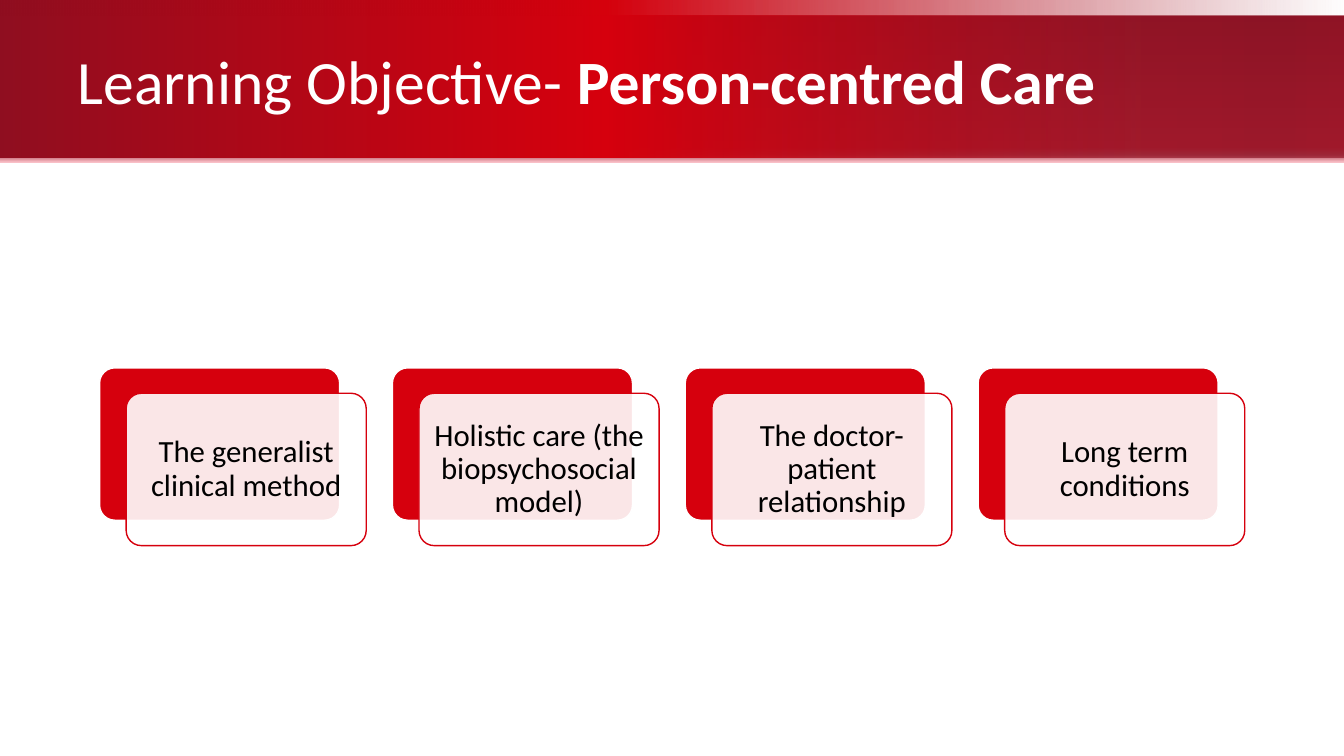
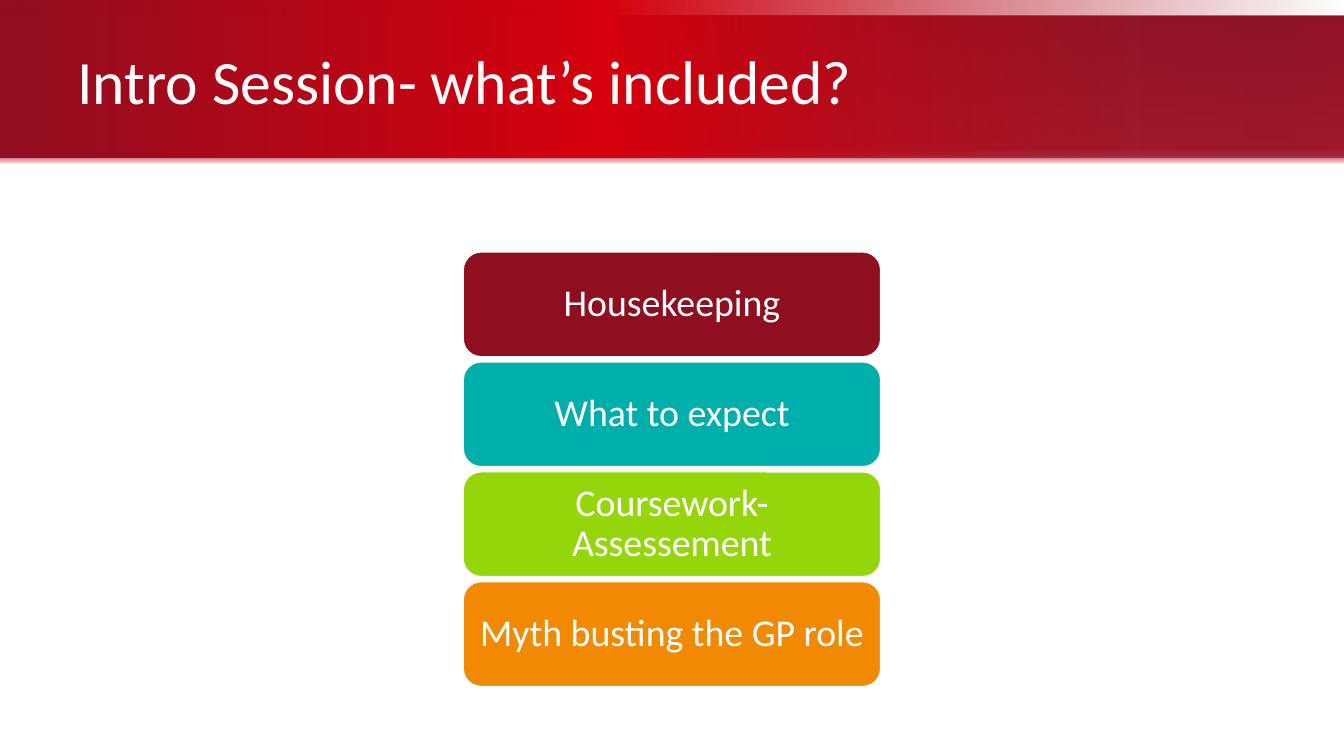
from dataclasses import dataclass
from typing import Optional

import pptx
import pptx.dml.color
import pptx.enum.shapes
import pptx.enum.text
import pptx.oxml.ns
import pptx.util
from lxml import etree
from pptx.util import Cm, Pt

RGB = pptx.dml.color.RGBColor
SHAPE = pptx.enum.shapes.MSO_SHAPE
ALIGN = pptx.enum.text.PP_ALIGN
ANCHOR = pptx.enum.text.MSO_ANCHOR
qn = pptx.oxml.ns.qn


@dataclass(frozen=True)
class Theme:
    font: str = "Calibri"
    white: str = "FFFFFF"
    black: str = "000000"
    red: str = "D6000D"
    crimson: str = "8F0E20"
    teal: str = "00AFAB"
    lime: str = "94D60A"
    orange: str = "F18903"
    title_size: int = 44
    card_size: int = 22
    bar_size: int = 27
    line_spacing: float = 0.9
    line_width: float = 1


THEME = Theme()
SLIDE_WIDTH, SLIDE_HEIGHT = 33.87, 19.05


@dataclass(frozen=True)
class Rect:
    """Position and size in centimetres."""
    left: float
    top: float
    width: float
    height: float


@dataclass(frozen=True)
class Stop:
    percent: int
    colour: str
    alpha: int = 100


@dataclass(frozen=True)
class Band:
    rect: Rect
    angle: int
    stops: tuple[Stop, ...]


@dataclass(frozen=True)
class BoxStyle:
    fill: str
    line: str
    alpha: int = 100
    corner: float = 0.1
    text_colour: str = THEME.black
    size: int = THEME.card_size
    inset_x: float = 0.2
    inset_y: float = 0.2


@dataclass(frozen=True)
class TitleRun:
    text: str
    bold: bool = False


HEADER_BANDS = (
    Band(Rect(0, 0, SLIDE_WIDTH, 0.43), 0, (
        Stop(0, THEME.crimson), Stop(45, THEME.red), Stop(100, THEME.crimson, 0))),
    Band(Rect(0, 0.4, SLIDE_WIDTH, 3.69), 90, (
        Stop(0, "931E2F"), Stop(90, "BA2A3C"), Stop(95, "B54E5C"), Stop(100, "F9BFC7"))),
    Band(Rect(0, 0.4, SLIDE_WIDTH, 3.56), 0, (
        Stop(0, THEME.crimson), Stop(45, THEME.red), Stop(85, THEME.crimson, 60),
        Stop(95, "890D1F", 60), Stop(100, THEME.crimson, 60))),
)
TITLE_RECT = Rect(1.7, 0.4, 28.04, 3.48)


def place(shape, rect: Rect) -> None:
    shape.left, shape.top = Cm(rect.left), Cm(rect.top)
    shape.width, shape.height = Cm(rect.width), Cm(rect.height)


def add_shape(page, kind, rect: Rect):
    shape = page.shapes.add_shape(
        kind, Cm(rect.left), Cm(rect.top), Cm(rect.width), Cm(rect.height))
    shape.shadow.inherit = False
    return shape


def set_alpha(colour_element, percent: int) -> None:
    if percent < 100:
        etree.SubElement(colour_element, qn("a:alpha"), val=str(percent * 1000))


def style_para(para, colour: str, size: int, align) -> None:
    para.alignment = align
    para.line_spacing = THEME.line_spacing
    para.font.name = THEME.font
    para.font.size = Pt(size)
    para.font.color.rgb = RGB.from_string(colour)


def add_band(page, band: Band):
    shape = add_shape(page, SHAPE.RECTANGLE, band.rect)
    shape.line.fill.background()
    shape.fill.gradient()
    shape.fill.gradient_angle = -band.angle % 360
    stop_list = shape._element.spPr.find(qn("a:gradFill")).find(qn("a:gsLst"))
    for old_stop in list(stop_list):
        stop_list.remove(old_stop)
    for stop in band.stops:
        entry = etree.SubElement(stop_list, qn("a:gs"), pos=str(stop.percent * 1000))
        set_alpha(etree.SubElement(entry, qn("a:srgbClr"), val=stop.colour), stop.alpha)
    return shape


def move_header_to_layout(page) -> None:
    """Draw the bands once and keep them on the layout, behind its title."""
    tree = page.slide_layout.shapes._spTree
    for offset, band in enumerate(HEADER_BANDS):
        tree.insert(2 + offset, add_band(page, band)._element)


def set_title(page, *runs: TitleRun) -> None:
    title = page.shapes.title
    place(title, TITLE_RECT)
    frame = title.text_frame
    frame.auto_size = pptx.enum.text.MSO_AUTO_SIZE.NONE
    frame.vertical_anchor = ANCHOR.MIDDLE
    para = frame.paragraphs[0]
    style_para(para, THEME.white, THEME.title_size, ALIGN.LEFT)
    for run in runs:
        span = para.add_run()
        span.text = run.text
        span.font.bold = run.bold


def add_box(page, rect: Rect, style: BoxStyle, text: Optional[str] = None) -> None:
    box = add_shape(page, SHAPE.ROUNDED_RECTANGLE, rect)
    box.adjustments[0] = style.corner
    box.fill.solid()
    box.fill.fore_color.rgb = RGB.from_string(style.fill)
    set_alpha(box._element.spPr.find(qn("a:solidFill"))[0], style.alpha)
    box.line.color.rgb = RGB.from_string(style.line)
    box.line.width = Pt(THEME.line_width)
    if text is None:
        return
    frame = box.text_frame
    frame.word_wrap = True
    frame.vertical_anchor = ANCHOR.MIDDLE
    frame.margin_left = frame.margin_right = Cm(style.inset_x)
    frame.margin_top = frame.margin_bottom = Cm(style.inset_y)
    para = frame.paragraphs[0]
    para.text = text
    style_para(para, style.text_colour, style.size, ALIGN.CENTER)


def draw_care_topics(page) -> None:
    set_title(page, TitleRun("Learning Objective- "), TitleRun("Person-centred Care", True))
    back = BoxStyle(THEME.red, THEME.white)
    front = BoxStyle(THEME.white, THEME.red, alpha=90)
    left, top, width, height, step = 2.51, 9.27, 6.05, 3.84, 7.38
    shift_x, shift_y = 0.67, 0.64
    topics = (
        "The generalist clinical method",
        "Holistic care (the biopsychosocial model)",
        "The doctor-patient relationship",
        "Long term conditions",
    )
    for index, topic in enumerate(topics):
        x = left + index * step
        add_box(page, Rect(x, top, width, height), back)
        add_box(page, Rect(x + shift_x, top + shift_y, width, height), front, topic)


def draw_session_parts(page) -> None:
    set_title(page, TitleRun("Intro Session- what’s included?"))
    top, width, height, step = 6.35, 10.52, 2.64, 2.77
    left = (SLIDE_WIDTH - width) / 2
    parts = (
        ("Housekeeping", THEME.crimson),
        ("What to expect", THEME.teal),
        ("Coursework- Assessement", THEME.lime),
        ("Myth busting the GP role", THEME.orange),
    )
    for index, (text, colour) in enumerate(parts):
        style = BoxStyle(colour, THEME.white, corner=0.17, text_colour=THEME.white,
                         size=THEME.bar_size, inset_x=0.25, inset_y=0.14)
        add_box(page, Rect(left, top + index * step, width, height), style, text)


def main() -> None:
    deck = pptx.Presentation()
    deck.slide_width, deck.slide_height = Cm(SLIDE_WIDTH), Cm(SLIDE_HEIGHT)
    title_only = deck.slide_layouts[5]

    # Slide 1: overlapping cards
    care_page = deck.slides.add_slide(title_only)
    move_header_to_layout(care_page)
    draw_care_topics(care_page)

    # Slide 2: stacked bars
    draw_session_parts(deck.slides.add_slide(title_only))

    deck.save("out.pptx")


if __name__ == "__main__":
    main()
